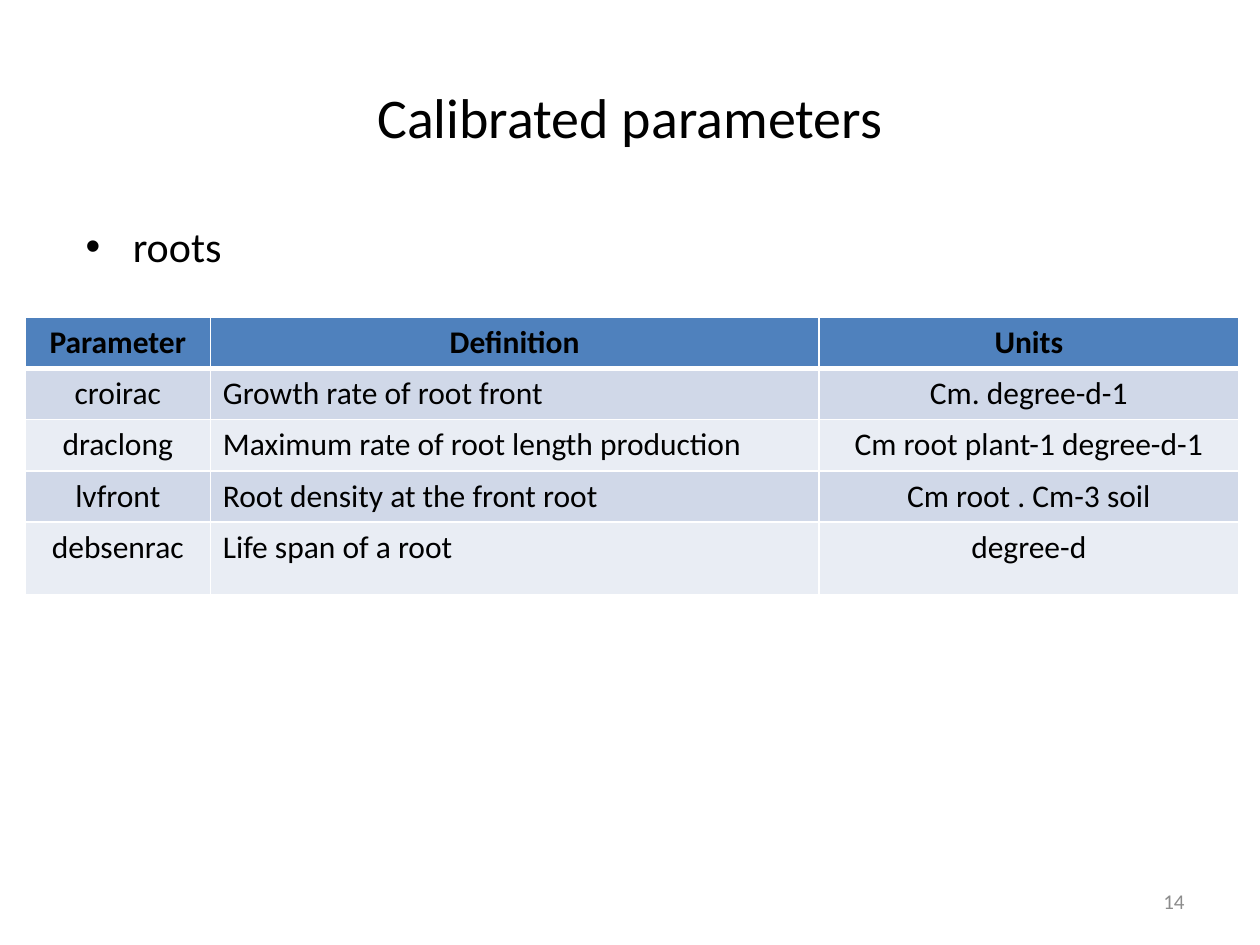
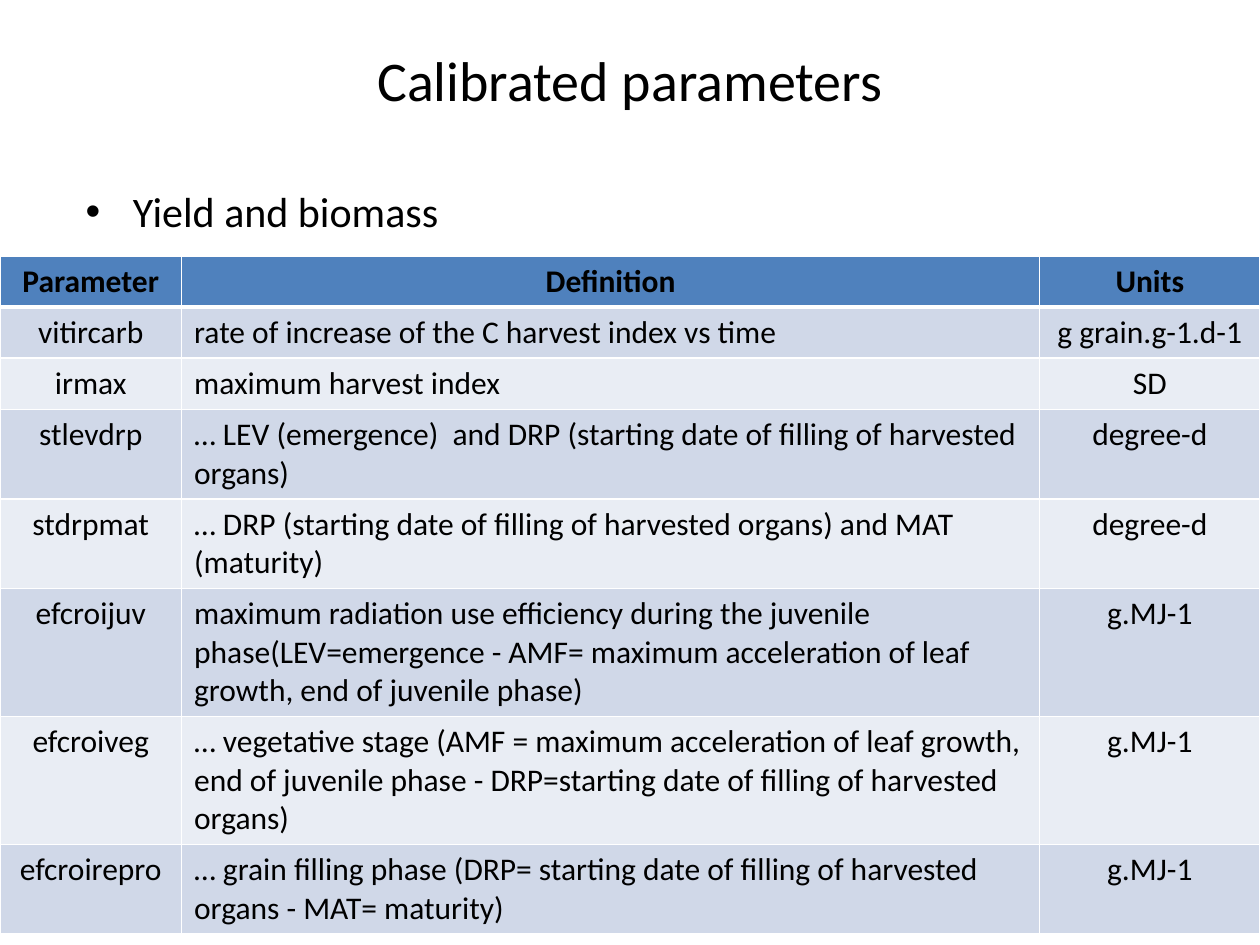
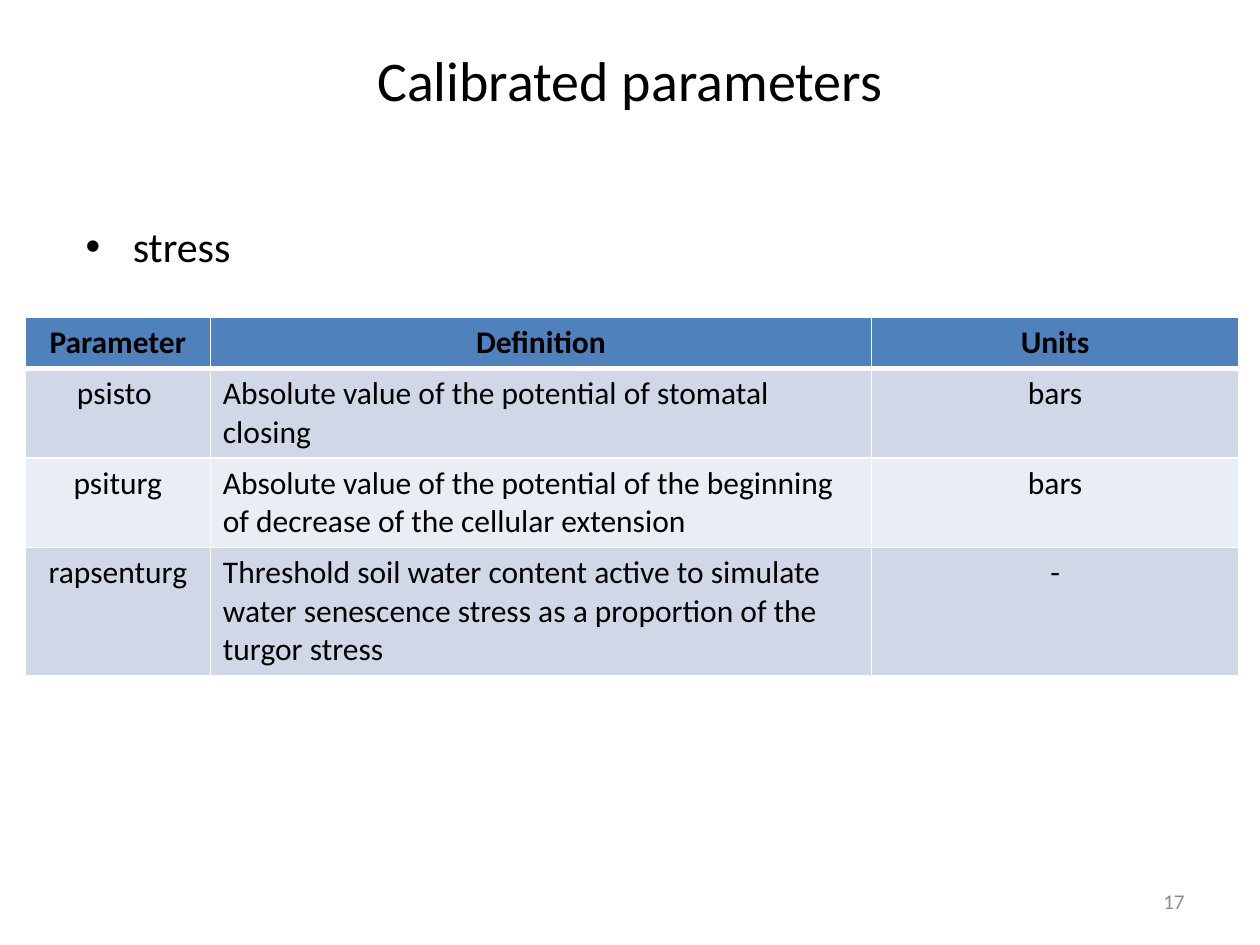
from dataclasses import dataclass

from lxml import etree
from pptx import Presentation
from pptx.dml.color import RGBColor
from pptx.enum.text import MSO_ANCHOR, MSO_AUTO_SIZE, PP_ALIGN
from pptx.oxml.ns import qn
from pptx.util import Cm, Pt

LEFT, CENTER, RIGHT = PP_ALIGN.LEFT, PP_ALIGN.CENTER, PP_ALIGN.RIGHT
MIDDLE, TOP = MSO_ANCHOR.MIDDLE, MSO_ANCHOR.TOP
NO_AUTOFIT = MSO_AUTO_SIZE.NONE
TITLE_AND_CONTENT = 1


@dataclass(frozen=True)
class Theme:
    font: str = "Calibri"
    text: RGBColor = RGBColor(0x00, 0x00, 0x00)
    muted: RGBColor = RGBColor(0x8C, 0x8C, 0x8C)
    header: RGBColor = RGBColor(0x4F, 0x81, 0xBD)
    bands: tuple = (RGBColor(0xD0, 0xD8, 0xE8), RGBColor(0xE9, 0xED, 0xF4))
    rule: RGBColor = RGBColor(0xFF, 0xFF, 0xFF)
    title_size: int = 32
    topic_size: int = 24
    table_size: int = 18
    number_size: int = 12
    thin_rule: int = 1
    thick_rule: int = 3


@dataclass(frozen=True)
class Box:
    """A rectangle in centimetres."""
    left: float
    top: float
    width: float
    height: float

    def lengths(self):
        return Cm(self.left), Cm(self.top), Cm(self.width), Cm(self.height)


THEME = Theme()
TITLE = "Calibrated parameters"
HEADINGS = ("Parameter", "Definition", "Units")
ALIGNMENTS = (CENTER, LEFT, CENTER)
NUMBER_BOX = Box(18.21, 17.65, 5.92, 1.02)

# Row heights for cells of one, two and three lines, and a taller last row
ONE_LINE, TWO_LINES, THREE_LINES, TALL = 1.02, 1.8, 2.57, 1.47

# Each row: height, parameter, definition, units
ROOTS = (
    (ONE_LINE, "croirac", "Growth rate of root front", "Cm. degree-d-1"),
    (ONE_LINE, "draclong", "Maximum rate of root length production",
     "Cm root plant-1 degree-d-1"),
    (ONE_LINE, "lvfront", "Root density at the front root", "Cm root . Cm-3 soil"),
    (TALL, "debsenrac", "Life span of a root", "degree-d"),
)
YIELD = (
    (ONE_LINE, "vitircarb", "rate of increase of the C harvest index vs time",
     "g grain.g-1.d-1"),
    (ONE_LINE, "irmax", "maximum harvest index", "SD"),
    (TWO_LINES, "stlevdrp",
     "… LEV (emergence)  and DRP (starting date of filling of harvested organs)",
     "degree-d"),
    (TWO_LINES, "stdrpmat",
     "… DRP (starting date of filling of harvested organs) and MAT (maturity)",
     "degree-d"),
    (THREE_LINES, "efcroijuv",
     "maximum radiation use efficiency during the juvenile phase(LEV=emergence"
     " - AMF= maximum acceleration of leaf growth, end of juvenile phase)",
     "g.MJ-1"),
    (THREE_LINES, "efcroiveg",
     "… vegetative stage (AMF = maximum acceleration of leaf growth, end of"
     " juvenile phase - DRP=starting date of filling of harvested organs)",
     "g.MJ-1"),
    (TWO_LINES, "efcroirepro",
     "… grain filling phase (DRP= starting date of filling of harvested organs"
     " - MAT= maturity)",
     "g.MJ-1"),
)
STRESS = (
    (TWO_LINES, "psisto ", "Absolute value of the potential of stomatal closing",
     "bars"),
    (TWO_LINES, "psiturg",
     "Absolute value of the potential of the beginning of decrease of the"
     " cellular extension",
     "bars"),
    (THREE_LINES, "rapsenturg",
     "Threshold soil water content active to simulate water senescence stress"
     " as a proportion of the turgor stress",
     "-"),
)


def write(frame, text, size, color=THEME.text, align=LEFT, bold=False):
    para = frame.paragraphs[0]
    para.alignment = align
    span = para.add_run()
    span.text = text
    font = span.font
    font.name, font.size, font.bold = THEME.font, Pt(size), bold
    font.color.rgb = color


def place(shape, box, anchor):
    """Move a text shape to the box and return its text frame."""
    shape.left, shape.top, shape.width, shape.height = box.lengths()
    frame = shape.text_frame
    frame.word_wrap = True
    frame.auto_size = NO_AUTOFIT
    frame.vertical_anchor = anchor
    return frame


def add_title(page, box):
    write(place(page.shapes.title, box, MIDDLE), TITLE, THEME.title_size,
          align=CENTER)


def add_topic(page, box, topic):
    write(place(page.placeholders[1], box, TOP), topic, THEME.topic_size)


def add_page_number(page, box, number):
    shape = page.shapes.add_textbox(*box.lengths())
    write(place(shape, box, MIDDLE), str(number), THEME.number_size,
          THEME.muted, RIGHT)


def add_border(cell, side, points):
    properties = cell._tc.get_or_add_tcPr()
    line = etree.SubElement(properties, qn(f"a:ln{side}"), w=str(Pt(points)))
    fill = etree.SubElement(line, qn("a:solidFill"))
    etree.SubElement(fill, qn("a:srgbClr"), val=str(THEME.rule))


def format_cell(cell, row, text, align):
    is_header = row == 0
    thick_side = {0: "B", 1: "T"}.get(row)
    for side in "LRTB":
        add_border(cell, side,
                   THEME.thick_rule if side == thick_side else THEME.thin_rule)
    cell.fill.solid()
    cell.fill.fore_color.rgb = (
        THEME.header if is_header else THEME.bands[(row - 1) % 2])
    write(cell.text_frame, text, THEME.table_size,
          align=CENTER if is_header else align, bold=is_header)


def add_parameter_table(page, left, top, widths, rows):
    records = ((ONE_LINE, *HEADINGS), *rows)
    box = Box(left, top, sum(widths), sum(record[0] for record in records))
    table = page.shapes.add_table(len(records), len(widths), *box.lengths()).table
    table.horz_banding = False
    for column, width in zip(table.columns, widths):
        column.width = Cm(width)
    for row, (height, *texts) in enumerate(records):
        table.rows[row].height = Cm(height)
        for column, (text, align) in enumerate(zip(texts, ALIGNMENTS)):
            format_cell(table.cell(row, column), row, text, align)


def add_parameter_page(deck, topic, rows, widths, title_top=0, topic_top=4.32,
                       table_left=0.51, table_top=6.4, number=None):
    page = deck.slides.add_slide(deck.slide_layouts[TITLE_AND_CONTENT])
    add_title(page, Box(1.27, title_top, 22.86, 3.18))
    add_topic(page, Box(1.47, topic_top, 22.86, 1.55), topic)
    add_parameter_table(page, table_left, table_top, widths, rows)
    if number is not None:
        add_page_number(page, NUMBER_BOX, number)


def main():
    deck = Presentation()
    deck.slide_width, deck.slide_height = Cm(25.4), Cm(19.05)
    add_parameter_page(deck, "roots", ROOTS, (3.73, 12.27, 8.46),
                       title_top=0.76, number=14)
    add_parameter_page(deck, "Yield and biomass", YIELD, (3.66, 17.3, 4.44),
                       topic_top=3.61, table_left=0, table_top=5.16)
    add_parameter_page(deck, "stress", STRESS, (3.73, 13.33, 7.4), number=17)
    deck.save("out.pptx")


if __name__ == "__main__":
    main()
